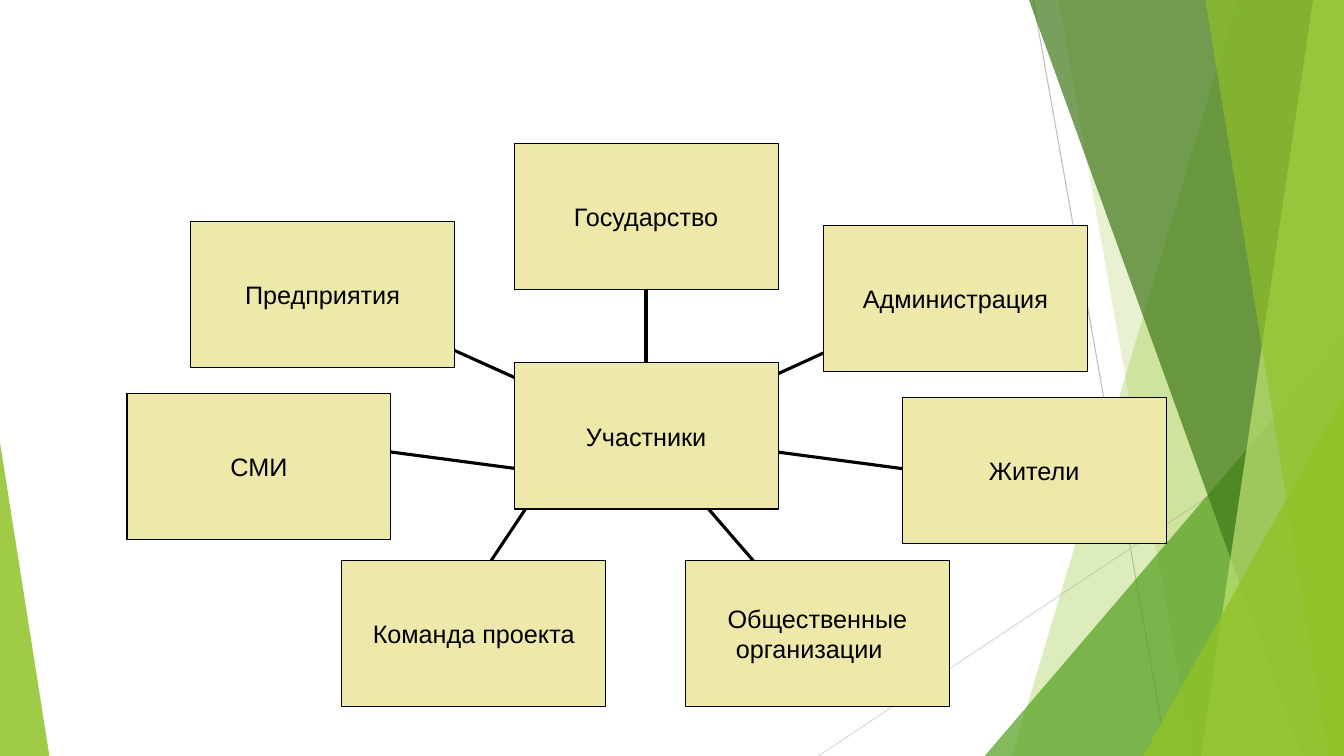
from lxml import etree
from pptx import Presentation
from pptx import util as u
from pptx.dml.color import RGBColor
from pptx.enum import shapes, text
from pptx.oxml.ns import qn

# Content: label lines, box corner, spoke start and end (points)
HUB = (["Участники"], (367.2, 259.2))
NODES = [
    (["Жители"], (644.4, 283.7), (553, 322.6), (645.1, 334.8)),
    (["СМИ"], (90.7, 280.8), (277.2, 322.6), (369.4, 334.8)),
    (["Команда проекта"], (244.1, 400.3), (378.7, 358.6), (345.6, 408.2)),
    (["Общественные", "организации"], (489.6, 400.3), (501.8, 358.6), (542.9, 406.1)),
    (["Предприятия"], (136.1, 158.4), (313.9, 245.5), (387.4, 278.6)),
    (["Администрация"], (588.2, 161.3), (544.3, 272.2), (601.2, 246.2)),
    (["Государство"], (367.2, 102.2), (461.5, 206.6), (461.5, 259.2)),
]
THEME = {
    "font": "Arial", "size": 18, "ink": "000000", "box": "EEE8AA",
    "lime": "90C226", "leaf": "54A021", "dark": "3F7819", "pale": "C0E474",
    "ray": "BFBFBF", "mist": "D9D9D9", "edge": 0.75, "spoke": 2.25,
}
WIDE, HIGH = 960, 540
BOX = (188.6, 104.4)
INDENT = 36  # second label line

# Backdrop, back to front
RAYS = [((738, 0), (833.8, HIGH), "ray"), ((WIDE, 290.2), (584.6, HIGH), "mist")]
SHARDS = [  # band: top x, bottom x; peak: left, top, width, apex
    ("band", (884.2, 722.9), "lime", 30),
    ("band", (756, 851.8), "lime", 20),
    ("peak", (703.4, 239.8, 256.6, 1), "leaf", 72),
    ("band", (735.1, 929.5), "dark", 70),
    ("band", (938.2, 858.2), "pale", 70),
    ("band", (861.1, 949), "lime", 65),
    ("peak", (816.5, 283, 143.5, 1), "lime", 80),
    ("peak", (0, 316.1, 35.3, 0), "lime", 85),
]

deck = Presentation()
deck.slide_width, deck.slide_height = u.Pt(WIDE), u.Pt(HIGH)
slide = deck.slides.add_slide(deck.slide_layouts[6])
parts = slide.shapes


def tint(name):
    return RGBColor.from_string(THEME[name])


def paint(shape, name):
    shape.shadow.inherit = False
    shape.fill.solid()
    shape.fill.fore_color.rgb = tint(name)


def add_line(start, end, name, width):
    ends = [u.Pt(v) for v in (*start, *end)]
    line = parts.add_connector(shapes.MSO_CONNECTOR.STRAIGHT, *ends)
    line.line.color.rgb = tint(name)
    line.line.width = u.Pt(width)
    etree.SubElement(line._element.spPr, qn("a:effectLst"))


def add_shard(kind, dims, name, alpha):
    if kind == "band":
        top, low = dims
        pen = parts.build_freeform(top, 0, scale=float(u.Pt(1)))
        pen.add_line_segments([(WIDE, 0), (WIDE, HIGH), (low, HIGH)], close=True)
        shard = pen.convert_to_shape()
    else:
        left, top, width, apex = dims
        frame = [u.Pt(v) for v in (left, top, width, HIGH - top)]
        shard = parts.add_shape(shapes.MSO_SHAPE.ISOSCELES_TRIANGLE, *frame)
        shard.adjustments[0] = apex
    paint(shard, name)
    shard.line.fill.background()
    color = shard._element.spPr.find(qn("a:solidFill"))[0]
    etree.SubElement(color, qn("a:alpha"), val=str(alpha * 1000))


def add_box(lines, corner):
    frame = [u.Pt(v) for v in (*corner, *BOX)]
    box = parts.add_shape(shapes.MSO_SHAPE.RECTANGLE, *frame)
    paint(box, "box")
    box.line.color.rgb = tint("ink")
    box.line.width = u.Pt(THEME["edge"])
    body = box.text_frame
    body.word_wrap = True
    body.vertical_anchor = text.MSO_ANCHOR.MIDDLE
    body.margin_left = body.margin_right = body.margin_top = body.margin_bottom = 0
    for i, label in enumerate(lines):
        para = body.add_paragraph() if i else body.paragraphs[0]
        para.alignment = text.PP_ALIGN.LEFT if i else text.PP_ALIGN.CENTER
        if i:
            para._p.get_or_add_pPr().set("marL", str(u.Pt(INDENT)))
        run = para.add_run()
        run.text = label
        run.font.name = THEME["font"]
        run.font.size = u.Pt(THEME["size"])
        run.font.color.rgb = tint("ink")


# Backdrop
for start, end, name in RAYS:
    add_line(start, end, name, THEME["edge"])
for shard in SHARDS:
    add_shard(*shard)

# Spokes, then boxes over their ends
for _, _, start, end in NODES:
    add_line(start, end, "ink", THEME["spoke"])
for lines, corner, *_ in NODES:
    add_box(lines, corner)
add_box(*HUB)

deck.save("out.pptx")
